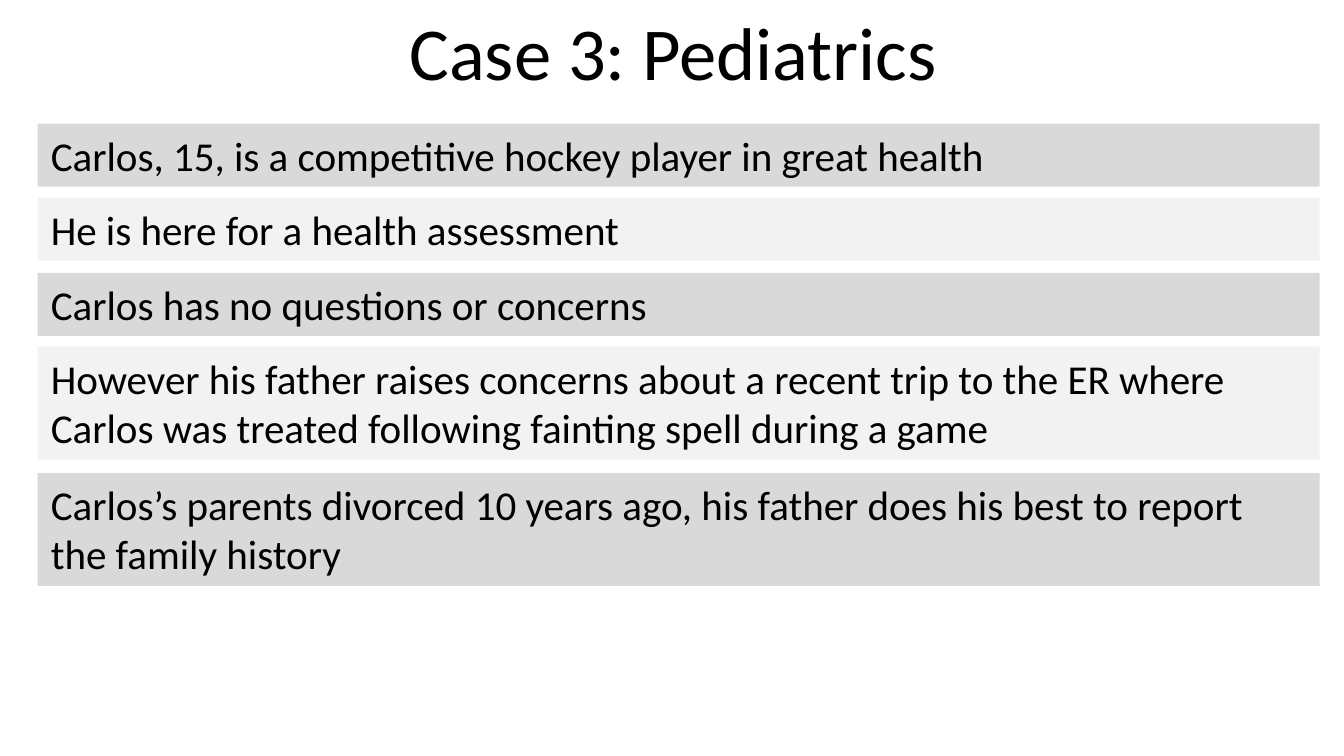
from dataclasses import dataclass
from itertools import cycle

from pptx import Presentation
from pptx.dml.color import RGBColor
from pptx.enum.shapes import MSO_SHAPE
from pptx.enum.text import MSO_ANCHOR, MSO_AUTO_SIZE, PP_ALIGN
from pptx.util import Inches, Pt


@dataclass(frozen=True)
class Theme:
    """Colours, font and type sizes of the slide."""
    ink: RGBColor = RGBColor(0x00, 0x00, 0x00)
    dark: RGBColor = RGBColor(0xD9, 0xD9, 0xD9)
    light: RGBColor = RGBColor(0xF2, 0xF2, 0xF2)
    font: str = "Calibri"
    title: int = 40
    body: int = 22


THEME = Theme()
LEFT, WIDTH = 0.28, 9.54
ONE, TWO = 0.47, 0.84
FACTS = [
    (0.92, ONE, "Carlos, 15, is a competitive hockey player in great health"),
    (1.47, ONE, "He is here for a health assessment"),
    (2.03, ONE, "Carlos has no questions or concerns"),
    (2.58, TWO, "However his father raises concerns about a recent trip to the ER "
                "where Carlos was treated following fainting spell during a game"),
    (3.52, TWO, "Carlos’s parents divorced 10 years ago, his father does his best "
                "to report the family history"),
]


def write(frame, text, size, align, anchor):
    """Fill a text frame with one styled paragraph."""
    frame.word_wrap = True
    frame.vertical_anchor = anchor
    para = frame.paragraphs[0]
    para.text = text
    para.alignment = align
    para.font.name = THEME.font
    para.font.size = Pt(size)
    para.font.color.rgb = THEME.ink


def add_title(slide, text):
    """Place and format the title."""
    title = slide.shapes.title
    title.left, title.top = Inches(0.51), Inches(-0.09)
    title.width, title.height = Inches(9), Inches(0.94)
    write(title.text_frame, text, THEME.title, PP_ALIGN.CENTER, MSO_ANCHOR.MIDDLE)


def add_bar(slide, top, height, text, fill):
    """Add one shaded bar with a fact of the case."""
    bar = slide.shapes.add_shape(
        MSO_SHAPE.RECTANGLE, Inches(LEFT), Inches(top), Inches(WIDTH), Inches(height))
    bar.shadow.inherit = False
    bar.fill.solid()
    bar.fill.fore_color.rgb = fill
    bar.line.fill.background()
    write(bar.text_frame, text, THEME.body, PP_ALIGN.LEFT, MSO_ANCHOR.TOP)
    bar.text_frame.auto_size = MSO_AUTO_SIZE.SHAPE_TO_FIT_TEXT


def main():
    """Build and save the slide."""
    deck = Presentation()
    deck.slide_width = Inches(10)
    deck.slide_height = Inches(10 * 9 / 16)
    slide = deck.slides.add_slide(deck.slide_layouts[5])
    add_title(slide, "Case 3: Pediatrics")
    for (top, height, text), fill in zip(FACTS, cycle([THEME.dark, THEME.light])):
        add_bar(slide, top, height, text, fill)
    deck.save("out.pptx")


if __name__ == "__main__":
    main()
